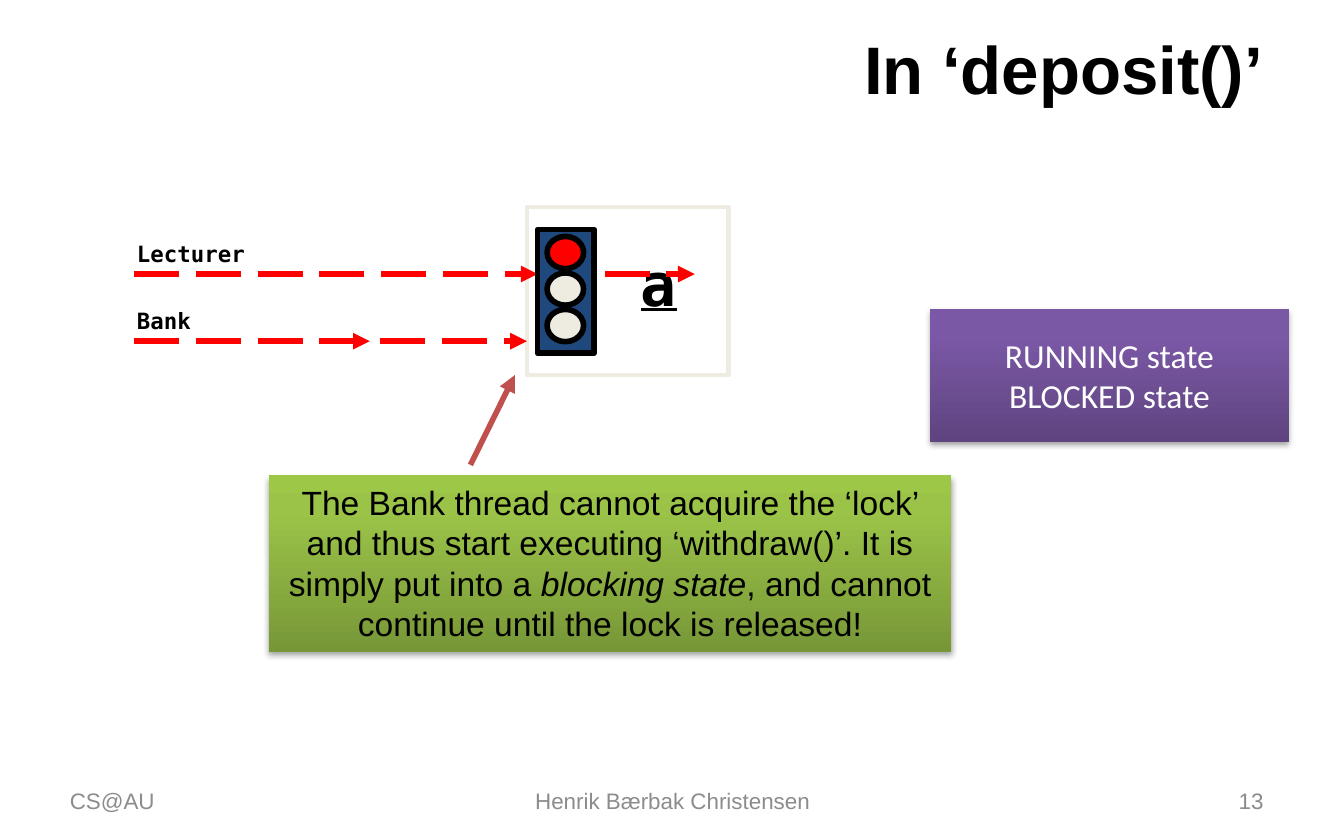
from lxml.etree import SubElement
from pptx import Presentation
from pptx.dml.color import RGBColor
from pptx.enum.dml import MSO_LINE
from pptx.enum.shapes import MSO_CONNECTOR, MSO_SHAPE
from pptx.enum.text import MSO_ANCHOR, PP_ALIGN
from pptx.oxml import parse_xml
from pptx.oxml.ns import nsdecls, qn
from pptx.util import Cm, Pt

COLORS = {
    "black": "000000", "white": "FFFFFF", "grey": "8C8C8C", "red": "FF0000",
    "cream": "EEECE1", "navy": "1F497D", "brick": "C0504D",
}
GREEN = [(0, "779737"), (80, "9BC348"), (100, "9DC746")]
PURPLE = [(0, "5F4480"), (80, "7B58A6"), (100, "7C57A8")]
SANS, MONO, BODY = "Arial", "DejaVu Sans Mono", "Calibri"
L, C, R = PP_ALIGN.LEFT, PP_ALIGN.CENTER, PP_ALIGN.RIGHT

# Content: positions in cm
TITLE = "In ‘deposit()’"
FOOTERS = [("CS@AU", 1.07, 5.92, L), ("Henrik Bærbak Christensen", 8.69, 8.05, C),
           ("13", 18.21, 5.92, R)]
LANES = [("Lecturer", 5.18, 2.59, 10.16), ("Bank", 6.45, 1.55, 6.99)]
LATE_ARROWS = [(11.43, 13.13, LANES[0][1]), (7.19, 9.96, LANES[1][1])]
LIGHTS = ["red", "cream", "cream"]
LIGHT_TOP, LIGHT_STEP = 4.47, 0.69
NOTE = [("The Bank thread cannot acquire the ‘lock’ and thus start executing "
         "‘withdraw()’. It is simply put into a ", False),
        ("blocking state", True),
        (", and cannot continue until the lock is released!", False)]
STATES = ["RUNNING state", "BLOCKED state"]

prs = Presentation()
prs.slide_width, prs.slide_height = Cm(25.4), Cm(15.88)
s = prs.slides.add_slide(prs.slide_layouts[6])


def rgb(name):
    return RGBColor.from_string(COLORS[name])


def add_run(p, text, size, font, color="black", bold=False, italic=False, underline=False):
    r = p.add_run()
    r.text = text
    f = r.font
    f.size, f.name, f.bold, f.italic, f.underline = Pt(size), font, bold, italic, underline
    f.color.rgb = rgb(color)


def add_text(text, box, size, font, align=L, anchor=MSO_ANCHOR.MIDDLE, wrap=True, **style):
    tf = s.shapes.add_textbox(*map(Cm, box)).text_frame
    tf.word_wrap, tf.vertical_anchor = wrap, anchor
    p = tf.paragraphs[0]
    p.alignment = align
    add_run(p, text, size, font, **style)


def add_outlined(kind, box, fill, line, width):
    sp = s.shapes.add_shape(kind, *map(Cm, box))
    sp.shadow.inherit = False
    sp.fill.solid()
    sp.fill.fore_color.rgb = rgb(fill)
    sp.line.color.rgb = rgb(line)
    sp.line.width = Pt(width)


def add_arrow(x1, y1, x2, y2, color="red", dashed=True):
    cx = s.shapes.add_connector(MSO_CONNECTOR.STRAIGHT, *map(Cm, (x1, y1, x2, y2)))
    cx.line.color.rgb = rgb(color)
    cx.line.width = Pt(3)
    if dashed:
        cx.line.dash_style = MSO_LINE.LONG_DASH
    spPr = cx._element.spPr
    SubElement(spPr.find(qn("a:ln")), qn("a:tailEnd"), type="triangle")
    SubElement(spPr, qn("a:effectLst"))


def add_panel(box, stops, anchor):
    """Gradient box with a soft shadow; returns its centred paragraph."""
    sp = s.shapes.add_shape(MSO_SHAPE.RECTANGLE, *map(Cm, box))
    sp.fill.gradient()
    sp.fill.gradient_angle = 90
    sp.line.fill.background()
    spPr = sp._element.spPr
    gs_list = spPr.find(".//" + qn("a:gsLst"))
    for gs in list(gs_list):
        gs_list.remove(gs)
    for pos, color in stops:
        gs = SubElement(gs_list, qn("a:gs"), pos=str(pos * 1000))
        SubElement(gs, qn("a:srgbClr"), val=color)
    spPr.append(parse_xml(
        f'<a:effectLst {nsdecls("a")}><a:outerShdw blurRad="{Pt(3.1)}" dist="{Pt(1.8)}" '
        'dir="5400000" rotWithShape="0"><a:srgbClr val="000000"><a:alpha val="35000"/>'
        '</a:srgbClr></a:outerShdw></a:effectLst>'))
    tf = sp.text_frame
    tf.word_wrap, tf.vertical_anchor = True, anchor
    p = tf.paragraphs[0]
    p.alignment = C
    return p


# Title and footer
add_text(TITLE, (1.27, 0.46, 22.86, 1.65), 36, SANS, R, bold=True)
for text, x, w, align in FOOTERS:
    add_text(text, (x, 14.71, w, 0.84), 12, SANS, align, color="grey")

# Object box and thread lanes
add_outlined(MSO_SHAPE.RECTANGLE, (9.96, 3.91, 3.81, 3.18), "white", "cream", 2.25)
for name, y, w, end in LANES:
    add_arrow(2.54, y, end, y)
    add_text(name, (2.34, y - 0.76, w, 0.76), 12, MONO, anchor=MSO_ANCHOR.TOP,
             wrap=False, bold=True)
add_text("a", (11.86, 4.55, 1.19, 1.6), 32, MONO, C, wrap=False, bold=True, underline=True)

# Traffic light
add_outlined(MSO_SHAPE.RECTANGLE, (10.16, 4.34, 1.07, 2.34), "navy", "black", 3)
for i, color in enumerate(LIGHTS):
    add_outlined(MSO_SHAPE.OVAL, (10.34, LIGHT_TOP + i * LIGHT_STEP, 0.69, 0.61),
                 color, "black", 3)
for x1, x2, y in LATE_ARROWS:
    add_arrow(x1, y, x2, y)

# Explanation with its pointer
p = add_panel((5.08, 8.99, 12.9, 3.33), GREEN, MSO_ANCHOR.TOP)
for text, italic in NOTE:
    add_run(p, text, 18, SANS, italic=italic)
add_arrow(8.89, 8.79, 9.73, 7.09, "brick", dashed=False)

# Thread states
p = add_panel((17.58, 5.84, 6.78, 2.51), PURPLE, MSO_ANCHOR.MIDDLE)
for i, state in enumerate(STATES):
    if i:
        p.add_line_break()
    add_run(p, state, 18, BODY, "white")

prs.save("out.pptx")
